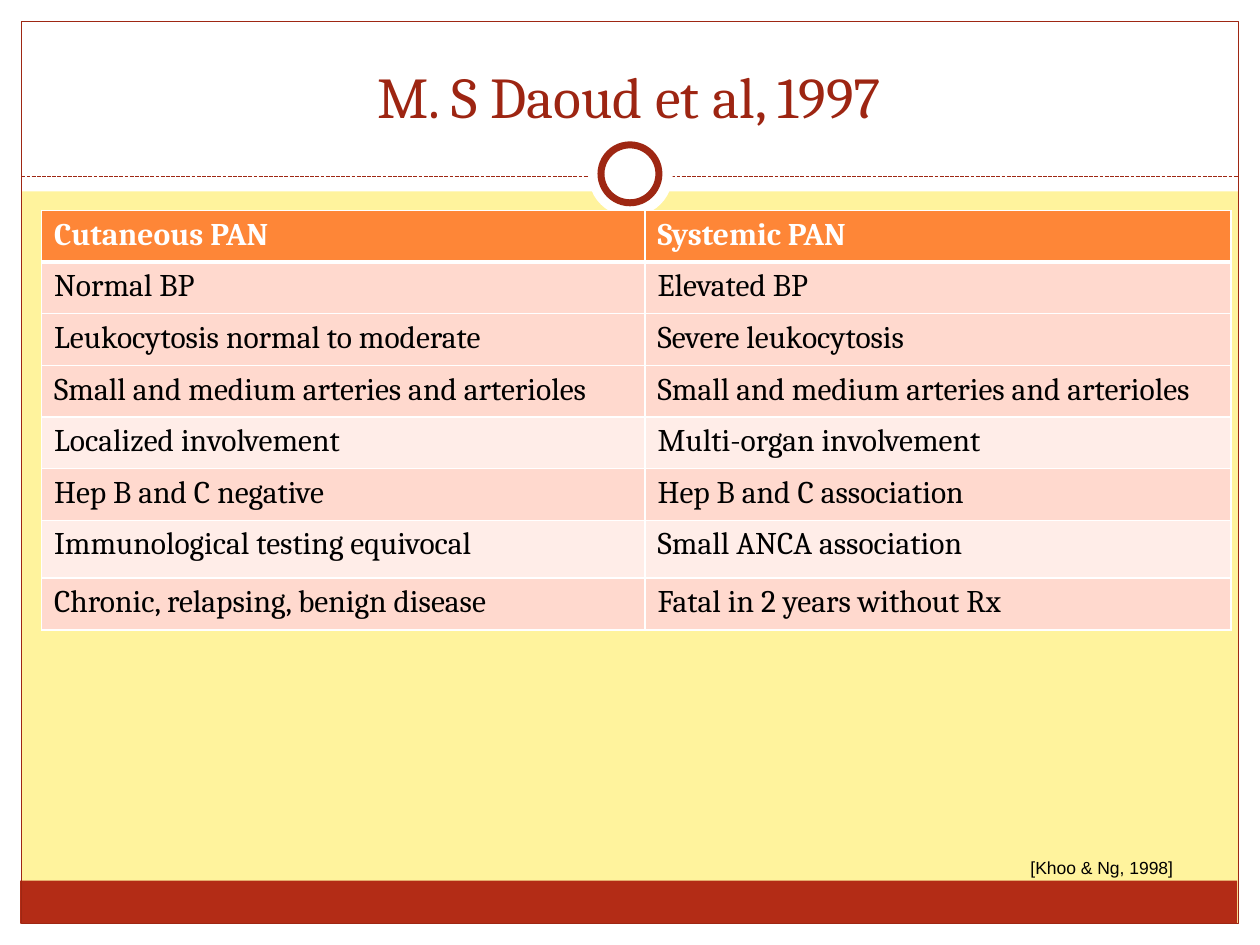
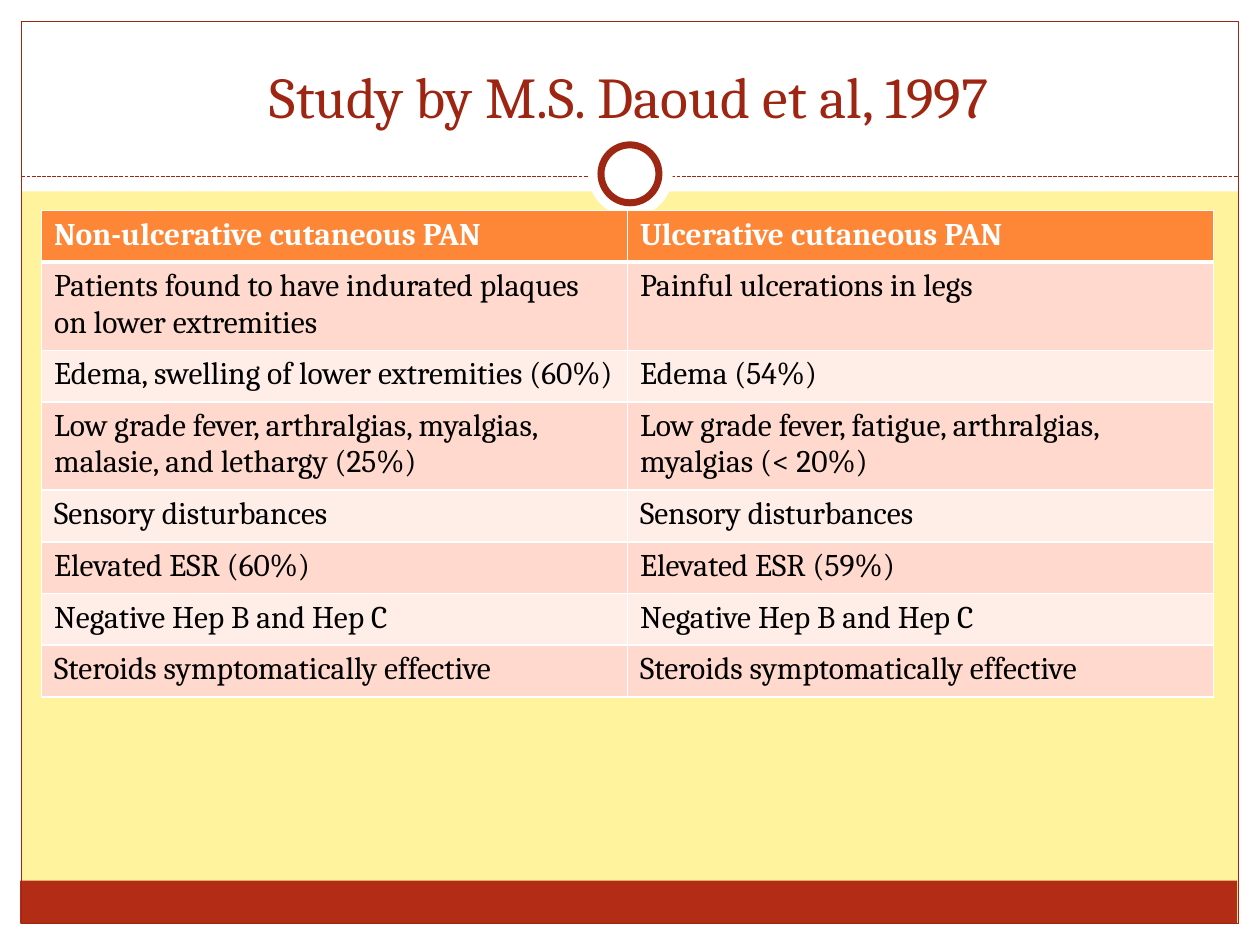
"""Build two comparison slides on polyarteritis nodosa in a shared frame."""
from dataclasses import dataclass

from lxml.etree import SubElement
from pptx import Presentation
from pptx.dml.color import RGBColor
from pptx.enum.dml import MSO_LINE
from pptx.enum.shapes import MSO_CONNECTOR, MSO_SHAPE
from pptx.enum.text import MSO_ANCHOR as Anchor, PP_ALIGN as Align
from pptx.oxml.ns import qn
from pptx.util import Inches, Pt

WIDTH, HEIGHT = Inches(10), Inches(7.5)
COLUMNS, ROWS = 100, 75
SERIF, SANS = "Cambria", "Arial"
WHITE, BLACK, CREAM = "FFFFFF", "000000", "FFF39D"
RED, DARK_RED, TITLE_RED = "B32C16", "9E2713", "9D2512"
ORANGE = "FE8637"
TONES = {"D": "FFD9CE", "L": "FFEDE8"}
EDGE = 1.7
RULE_ROW = 14
ROW_HEIGHT = 4.1
THIN, THICK = 1, 3


@dataclass(frozen=True)
class Area:
    left: float
    top: float
    width: float
    height: float

    def lengths(self) -> tuple:
        return across(self.left), down(self.top), across(self.width), down(self.height)


@dataclass(frozen=True)
class Piece:
    area: Area
    fill: str | None = None
    line: str | None = None
    weight: float = 0.75
    preset: MSO_SHAPE = MSO_SHAPE.RECTANGLE


@dataclass(frozen=True)
class Comparison:
    title: str
    widths: tuple[float, float]
    row_heights: tuple[float, ...]
    tones: str
    rows: tuple[tuple[str, str], ...]
    citation: str = ""


BANDS = (
    Piece(Area(0, ROWS - EDGE, COLUMNS, EDGE), WHITE),
    Piece(Area(0, 0, COLUMNS, 15.2), WHITE),
    Piece(Area(0, 0, EDGE, ROWS), WHITE),
    Piece(Area(COLUMNS - EDGE, 0, EDGE, ROWS), WHITE),
    Piece(Area(1.6, 69.9, 96.6, 3.4), RED),
    Piece(Area(EDGE, EDGE, COLUMNS - 2 * EDGE, ROWS - 2 * EDGE), line=DARK_RED),
)
MEDALLION = (
    Piece(Area(46.7, 10.5, 6.7, 6.7), WHITE, preset=MSO_SHAPE.OVAL),
    Piece(Area(47.7, 11.5, 4.6, 4.6), WHITE, DARK_RED, 4, MSO_SHAPE.OVAL),
)
TITLE_AREA = Area(3.3, 2.5, 93.3, 8.3)
CITATION_AREA = Area(80.8, 67.5, 19.2, 2.7)
TABLE_LEFT, TABLE_TOP = 3.3, 16.7

COMPARISONS = (
    Comparison(
        "M. S Daoud et al, 1997",
        (47.9, 46.5),
        (ROW_HEIGHT,) * 6 + (4.6, ROW_HEIGHT),
        "DDDLDLD",
        (
            ("Cutaneous PAN", "Systemic PAN"),
            ("Normal BP", "Elevated BP"),
            ("Leukocytosis normal to moderate", "Severe leukocytosis"),
            ("Small and medium arteries and arterioles",) * 2,
            ("Localized involvement", "Multi-organ involvement"),
            ("Hep B and C negative", "Hep B and C association"),
            ("Immunological testing equivocal", "Small ANCA association"),
            ("Chronic, relapsing, benign disease", "Fatal in 2 years without Rx"),
        ),
        "[Khoo & Ng, 1998]",
    ),
    Comparison(
        "Study by M.S. Daoud et al, 1997",
        (46.5, 46.5),
        (ROW_HEIGHT,) * 8,
        "DLDLDLD",
        (
            ("Non-ulcerative cutaneous PAN", "Ulcerative cutaneous PAN"),
            ("Patients found to have indurated plaques on lower extremities",
             "Painful ulcerations in legs"),
            ("Edema, swelling of lower extremities (60%)", "Edema (54%)"),
            ("Low grade fever, arthralgias, myalgias, malasie, and lethargy (25%)",
             "Low grade fever, fatigue, arthralgias, myalgias (< 20%)"),
            ("Sensory disturbances",) * 2,
            ("Elevated ESR (60%)", "Elevated ESR (59%)"),
            ("Negative Hep B and Hep C",) * 2,
            ("Steroids symptomatically effective",) * 2,
        ),
    ),
)


def across(columns: float) -> int:
    return round(WIDTH * columns / COLUMNS)


def down(rows: float) -> int:
    return round(HEIGHT * rows / ROWS)


def color(value: str) -> RGBColor:
    return RGBColor.from_string(value)


def write(frame, text: str, *, size: float, font: str = SERIF, ink: str = BLACK,
          bold: bool = False, align: Align = Align.LEFT) -> None:
    para = frame.paragraphs[0]
    para.alignment = align
    span = para.add_run()
    span.text = text
    span.font.name = font
    span.font.size = Pt(size)
    span.font.bold = bold
    span.font.color.rgb = color(ink)


def add_text(slide, area: Area, text: str, *, anchor: Anchor = Anchor.TOP, **style) -> None:
    frame = slide.shapes.add_textbox(*area.lengths()).text_frame
    frame.word_wrap = True
    frame.vertical_anchor = anchor
    write(frame, text, **style)


def add_piece(slide, piece: Piece) -> None:
    shape = slide.shapes.add_shape(piece.preset, *piece.area.lengths())
    shape.shadow.inherit = False
    if piece.fill:
        shape.fill.solid()
        shape.fill.fore_color.rgb = color(piece.fill)
    else:
        shape.fill.background()
    if piece.line:
        shape.line.color.rgb = color(piece.line)
        shape.line.width = Pt(piece.weight)
    else:
        shape.line.fill.background()


def add_rule(slide) -> None:
    height = down(RULE_ROW)
    rule = slide.shapes.add_connector(
        MSO_CONNECTOR.STRAIGHT, across(EDGE), height, across(COLUMNS - EDGE), height)
    rule.line.color.rgb = color(DARK_RED)
    rule.line.width = Pt(0.75)
    rule.line.dash_style = MSO_LINE.SQUARE_DOT
    SubElement(rule._element.spPr, qn("a:effectLst"))


def add_borders(cell, top: float, bottom: float) -> None:
    properties = cell._tc.get_or_add_tcPr()
    for side, weight in (("L", THIN), ("R", THIN), ("T", top), ("B", bottom)):
        border = SubElement(properties, qn(f"a:ln{side}"), w=str(Pt(weight)))
        fill = SubElement(border, qn("a:solidFill"))
        SubElement(fill, qn("a:srgbClr"), val=WHITE)


def add_comparison_table(slide, comparison: Comparison) -> None:
    area = Area(TABLE_LEFT, TABLE_TOP, sum(comparison.widths), sum(comparison.row_heights))
    table = slide.shapes.add_table(
        len(comparison.rows), len(comparison.widths), *area.lengths()).table
    table.horz_banding = False
    for column, width in zip(table.columns, comparison.widths):
        column.width = across(width)
    fills = [ORANGE] + [TONES[tone] for tone in comparison.tones]
    for index, (texts, fill) in enumerate(zip(comparison.rows, fills)):
        row = table.rows[index]
        row.height = down(comparison.row_heights[index])
        header = index == 0
        for cell, text in zip(row.cells, texts):
            add_borders(cell, THICK if index == 1 else THIN, THICK if header else THIN)
            cell.fill.solid()
            cell.fill.fore_color.rgb = color(fill)
            write(cell.text_frame, text, size=18, bold=header,
                  ink=WHITE if header else BLACK)


def add_frame(slide) -> None:
    slide.background.fill.solid()
    slide.background.fill.fore_color.rgb = color(CREAM)
    for band in BANDS:
        add_piece(slide, band)
    add_rule(slide)
    for disc in MEDALLION:
        add_piece(slide, disc)


def add_comparison(deck, comparison: Comparison) -> None:
    slide = deck.slides.add_slide(deck.slide_layouts[6])
    add_frame(slide)
    add_text(slide, TITLE_AREA, comparison.title, size=33, ink=TITLE_RED,
             align=Align.CENTER, anchor=Anchor.BOTTOM)
    add_comparison_table(slide, comparison)
    if comparison.citation:
        add_text(slide, CITATION_AREA, comparison.citation, size=10, font=SANS)


def main() -> None:
    deck = Presentation()
    deck.slide_width, deck.slide_height = WIDTH, HEIGHT
    for comparison in COMPARISONS:
        add_comparison(deck, comparison)
    deck.save("out.pptx")


if __name__ == "__main__":
    main()
